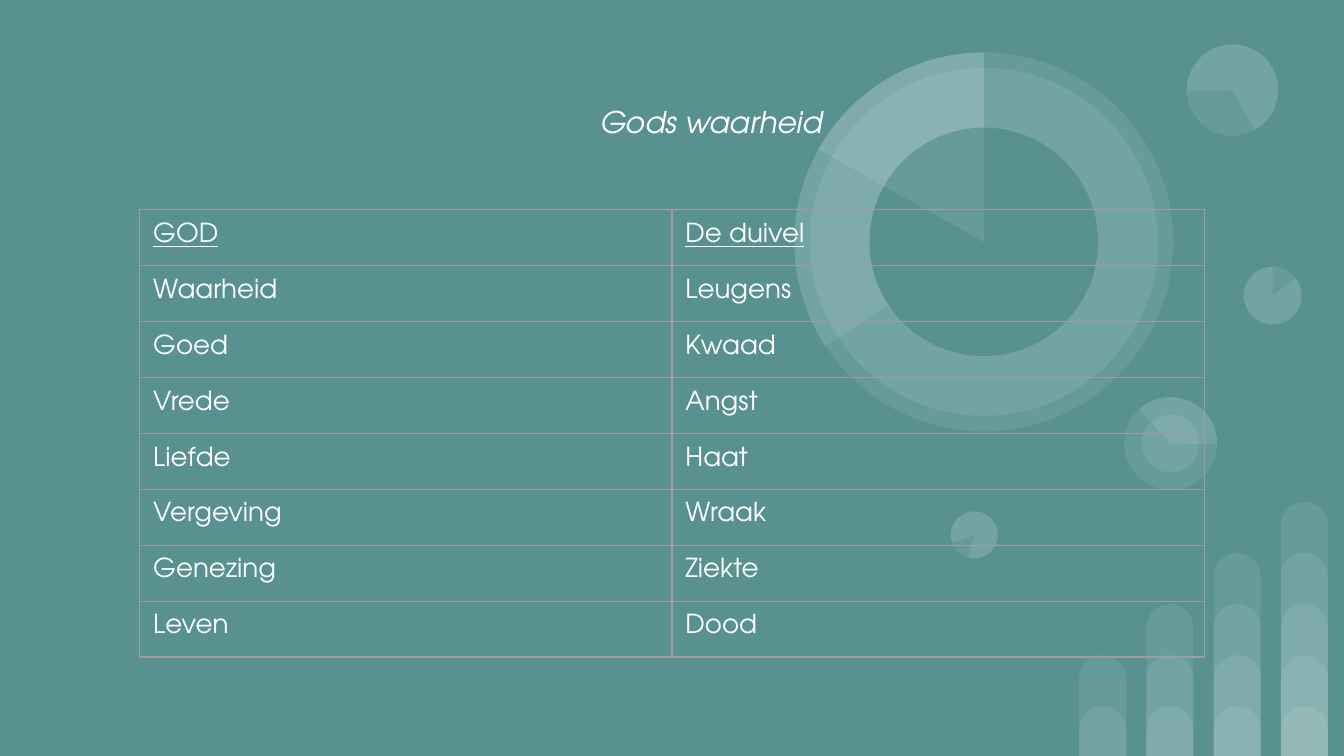
from lxml import etree
from pptx import Presentation
from pptx.dml.color import RGBColor
from pptx.enum.shapes import MSO_SHAPE
from pptx.enum.text import PP_ALIGN
from pptx.oxml.ns import qn
from pptx.util import Inches, Pt

BAR = MSO_SHAPE.ROUND_2_SAME_RECTANGLE
DISC = MSO_SHAPE.OVAL
PIE = MSO_SHAPE.PIE
CENTER = PP_ALIGN.CENTER

# Content
TITLE = "Gods waarheid"
ROWS = [
    ("GOD", "De duivel"),
    ("Waarheid", "Leugens"),
    ("Goed", "Kwaad"),
    ("Vrede", "Angst"),
    ("Liefde", "Haat"),
    ("Vergeving", "Wraak"),
    ("Genezing", "Ziekte"),
    ("Leven", "Dood"),
]

THEME = {
    "font": "TeX Gyre Adventor",
    "background": "599191",
    "white": "FFFFFF",
    "border": "9E9E9E",
    "border_width": Pt(0.75),
    "title_size": Pt(16),
    "cell_size": Pt(14),
    "alpha": 9,
}

# Widescreen format
SLIDE_W = 10
SLIDE_H = SLIDE_W * 9 / 16

# Discs: centre x, centre y, diameter, rotation, pie angles (None = full), opaque
DISCS = [
    (9.47, 2.2, 0.43, 0, None, False),
    (7.25, 3.98, 0.35, 196.2, None, False),
    (8.71, 3.3, 0.69, 90, None, False),
    (8.71, 3.3, 0.69, 90, (137.41, 270.77), False),
    (8.71, 3.3, 0.43, 90, None, False),
    (9.47, 2.2, 0.43, 0, (322.95, 270), False),
    (9.17, 0.67, 0.68, 215.9, None, False),
    (9.17, 0.67, 0.68, 215.9, (322.95, 205.23), False),
    (7.32, 1.8, 2.82, 0, None, False),
    (7.32, 1.8, 2.59, 34.1, None, False),
    (7.32, 1.8, 2.82, 0, (146.69, 270), False),
    (7.32, 1.8, 1.7, 34.1, None, True),
    (7.32, 1.8, 2.82, 0, (209.24, 270), False),
    (7.25, 3.98, 0.35, 196.2, (322.95, 270), False),
]

# Bars grow by one layer from left to right
BAR_COUNT, BAR_LEFT, BAR_PITCH, BAR_W = 4, 8.03, 0.5, 0.35
LAYER_BASE, LAYER_STEP = 0.37, 0.38

TABLE_LEFT, TABLE_TOP, TABLE_W, TABLE_H = 1.04, 1.56, 7.92, 3.33


def add_decoration(s, kind, left, top, width, height, opaque=False):
    sp = s.shapes.add_shape(kind, Inches(left), Inches(top), Inches(width), Inches(height))
    sp.shadow.inherit = False
    sp.line.fill.background()
    sp.fill.solid()
    color = THEME["background"] if opaque else THEME["white"]
    sp.fill.fore_color.rgb = RGBColor.from_string(color)
    if not opaque:
        clr = sp.fill._xPr.find(".//" + qn("a:srgbClr"))
        etree.SubElement(clr, qn("a:alpha"), val=str(THEME["alpha"] * 1000))
    return sp


def format_run(r, size, **style):
    r.font.name = THEME["font"]
    r.font.size = size
    r.font.color.rgb = RGBColor.from_string(THEME["white"])
    for name, value in style.items():
        setattr(r.font, name, value)


def add_borders(cell):
    tc_pr = cell._tc.get_or_add_tcPr()
    for i, side in enumerate(("lnL", "lnR", "lnT", "lnB")):
        ln = etree.Element(qn("a:" + side), w=str(THEME["border_width"]))
        fill = etree.SubElement(ln, qn("a:solidFill"))
        etree.SubElement(fill, qn("a:srgbClr"), val=THEME["border"])
        tc_pr.insert(i, ln)


def add_bars(s):
    for i in range(BAR_COUNT):
        for layer in range(i + 2):
            height = LAYER_BASE + layer * LAYER_STEP
            sp = add_decoration(s, BAR, BAR_LEFT + i * BAR_PITCH, SLIDE_H - height, BAR_W, height)
            sp.adjustments[0] = 0.5


def add_discs(s):
    for cx, cy, size, rotation, angles, opaque in DISCS:
        kind = PIE if angles else DISC
        sp = add_decoration(s, kind, cx - size / 2, cy - size / 2, size, size, opaque)
        sp.rotation = rotation
        for i, angle in enumerate(angles or ()):
            sp.adjustments[i] = angle * 0.6  # 60000 units per degree, scaled by 100000


def add_title(s):
    tf = s.shapes.add_textbox(Inches(0.89), Inches(0.67), Inches(8.81), Inches(4.6)).text_frame
    tf.word_wrap = True
    tf.margin_left = tf.margin_right = tf.margin_top = tf.margin_bottom = Inches(0.1)
    tf.text = TITLE
    p = tf.paragraphs[0]
    p.alignment = CENTER
    format_run(p.runs[0], THEME["title_size"], italic=True)


def add_comparison(s):
    table = s.shapes.add_table(
        len(ROWS), len(ROWS[0]),
        Inches(TABLE_LEFT), Inches(TABLE_TOP), Inches(TABLE_W), Inches(TABLE_H),
    ).table
    table.first_row = table.horz_banding = False
    for i, row in enumerate(ROWS):
        for j, text in enumerate(row):
            cell = table.cell(i, j)
            cell.margin_left = cell.margin_right = cell.margin_top = Inches(0.1)
            cell.margin_bottom = Inches(0.08)  # keeps the rows at their set height
            cell.fill.background()
            add_borders(cell)
            cell.text_frame.text = text
            r = cell.text_frame.paragraphs[0].runs[0]
            format_run(r, THEME["cell_size"], underline=(i == 0))


def main():
    prs = Presentation()
    prs.slide_width, prs.slide_height = Inches(SLIDE_W), Inches(SLIDE_H)
    s = prs.slides.add_slide(prs.slide_layouts[6])
    s.background.fill.solid()
    s.background.fill.fore_color.rgb = RGBColor.from_string(THEME["background"])
    add_bars(s)
    add_discs(s)
    add_title(s)
    add_comparison(s)
    prs.save("out.pptx")


if __name__ == "__main__":
    main()
